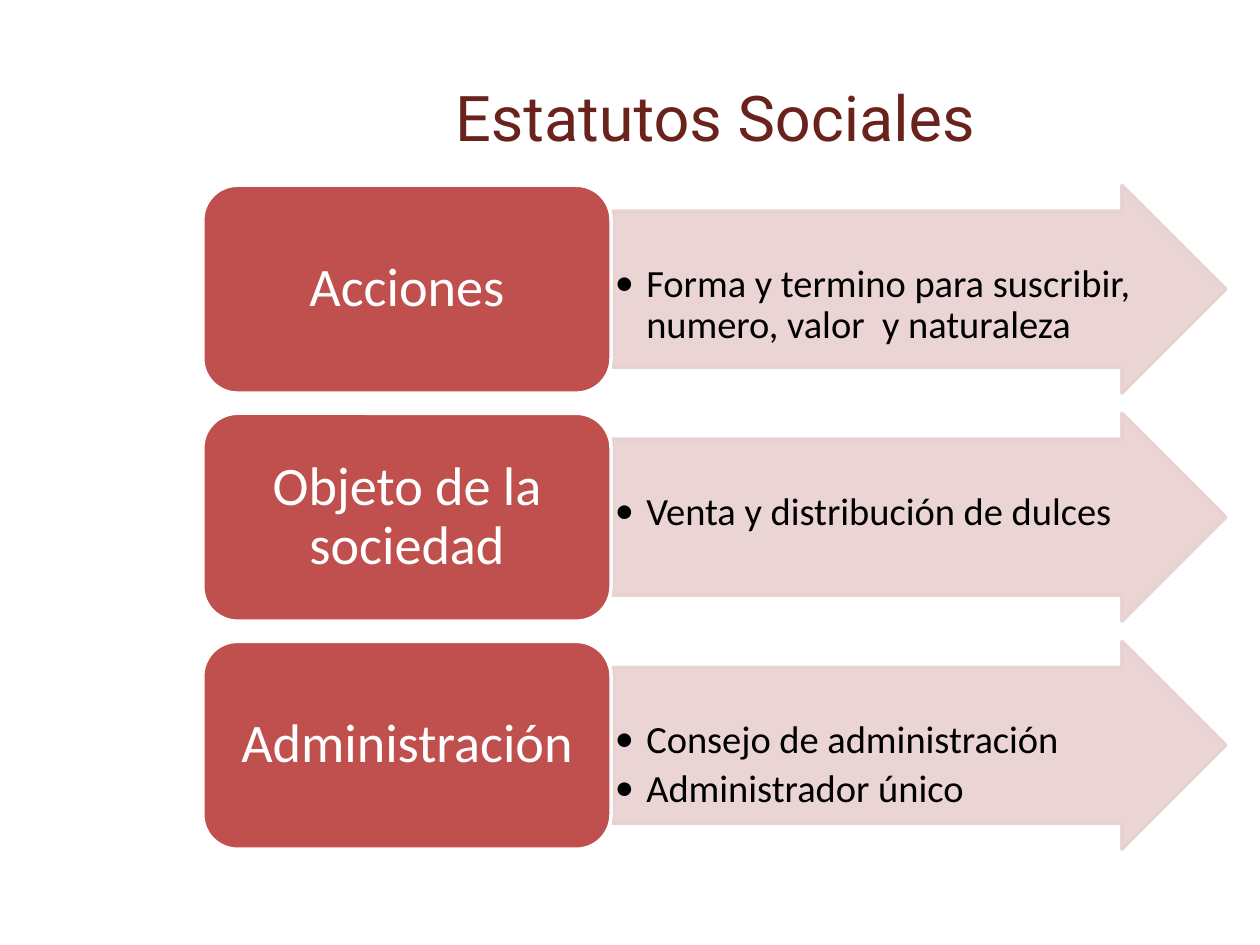
from lxml.etree import SubElement
from pptx import Presentation
from pptx.dml.color import RGBColor
from pptx.enum.shapes import MSO_SHAPE
from pptx.enum.text import MSO_ANCHOR, PP_ALIGN
from pptx.oxml.ns import qn
from pptx.util import Inches, Pt

MAROON = RGBColor(0x6A, 0x22, 0x1D)
RED = RGBColor(0xC0, 0x50, 0x4D)
PINK = RGBColor(0xE8, 0xD0, 0xD0)
WHITE = RGBColor(0xFF, 0xFF, 0xFF)
BLACK = RGBColor(0x00, 0x00, 0x00)

# Grid: a topic column, a detail column and evenly spaced rows
TOPIC_LEFT, TOPIC_WIDTH = 1.61, 3.24
DETAIL_LEFT, DETAIL_WIDTH = 4.86, 4.87
FIRST_ROW, ROW_HEIGHT, ROW_PITCH = 1.47, 1.65, 1.81

BODY_FONT = "Calibri"
DETAIL_SIZE, TOPIC_SIZE = 22, 31

STATUTES = [
    ("Acciones",
     ["Forma y termino para suscribir, numero, valor  y naturaleza"]),
    ("Objeto de la sociedad", ["Venta y distribución de dulces"]),
    ("Administración", ["Consejo de administración", "Administrador único"]),
]


def add_run(paragraph, text, font_name, size, color):
    run = paragraph.add_run()
    run.text = text
    run.font.name = font_name
    run.font.size = Pt(size)
    run.font.color.rgb = color


def add_block(slide, preset, left, top, width, fill, line, insets):
    block = slide.shapes.add_shape(
        preset, Inches(left), Inches(top), Inches(width), Inches(ROW_HEIGHT))
    block.shadow.inherit = False
    block.fill.solid()
    block.fill.fore_color.rgb = fill
    block.line.color.rgb = line
    block.line.width = Pt(2)
    frame = block.text_frame
    frame.word_wrap = True
    (frame.margin_left, frame.margin_top,
     frame.margin_right, frame.margin_bottom) = map(Inches, insets)
    return block


def make_translucent(block, percent):
    for color in block._element.spPr.iter(qn("a:srgbClr")):
        SubElement(color, qn("a:alpha"), val=str(percent * 1000))


def add_bullet(paragraph):
    properties = paragraph._p.get_or_add_pPr()
    properties.set("marL", str(Inches(0.25)))
    properties.set("indent", str(-Inches(0.25)))
    SubElement(properties, qn("a:buFont"), typeface=BODY_FONT)
    SubElement(properties, qn("a:buChar"), char="•")


def add_detail(slide, top, items):
    # The top inset starts the list below the arrow's upper edge
    arrow = add_block(slide, MSO_SHAPE.RIGHT_ARROW, DETAIL_LEFT, top,
                      DETAIL_WIDTH, PINK, PINK, (0.02, 0.42, 0.02, 0.02))
    arrow.adjustments[0] = 0.75
    arrow.adjustments[1] = 0.5
    make_translucent(arrow, 90)
    frame = arrow.text_frame
    frame.vertical_anchor = MSO_ANCHOR.TOP
    for index, item in enumerate(items):
        paragraph = frame.add_paragraph() if index else frame.paragraphs[0]
        add_bullet(paragraph)
        paragraph.font.size = Pt(DETAIL_SIZE)
        paragraph.alignment = PP_ALIGN.LEFT
        paragraph.line_spacing = 0.9
        paragraph.space_after = Pt(4)
        add_run(paragraph, item, BODY_FONT, DETAIL_SIZE, BLACK)


def add_topic(slide, top, name):
    topic = add_block(slide, MSO_SHAPE.ROUNDED_RECTANGLE, TOPIC_LEFT, top,
                      TOPIC_WIDTH, RED, WHITE, (0.13, 0.06, 0.13, 0.06))
    topic.text_frame.vertical_anchor = MSO_ANCHOR.MIDDLE
    paragraph = topic.text_frame.paragraphs[0]
    paragraph.alignment = PP_ALIGN.CENTER
    paragraph.line_spacing = 0.9
    add_run(paragraph, name, BODY_FONT, TOPIC_SIZE, WHITE)


def set_title(slide, text):
    title = slide.shapes.title
    title.left, title.top = Inches(1.85), Inches(0.3)
    title.width, title.height = Inches(7.65), Inches(1.25)
    title.text_frame.vertical_anchor = MSO_ANCHOR.MIDDLE
    paragraph = title.text_frame.paragraphs[0]
    paragraph.alignment = PP_ALIGN.CENTER
    add_run(paragraph, text, "Roboto", 36, MAROON)


def main():
    deck = Presentation()
    deck.slide_width, deck.slide_height = Inches(10), Inches(7.5)
    slide = deck.slides.add_slide(deck.slide_layouts[5])
    set_title(slide, "Estatutos Sociales")

    # One row per statute: the detail arrow, then its topic
    for row, (name, items) in enumerate(STATUTES):
        top = FIRST_ROW + row * ROW_PITCH
        add_detail(slide, top, items)
        add_topic(slide, top, name)

    deck.save("out.pptx")


if __name__ == "__main__":
    main()
